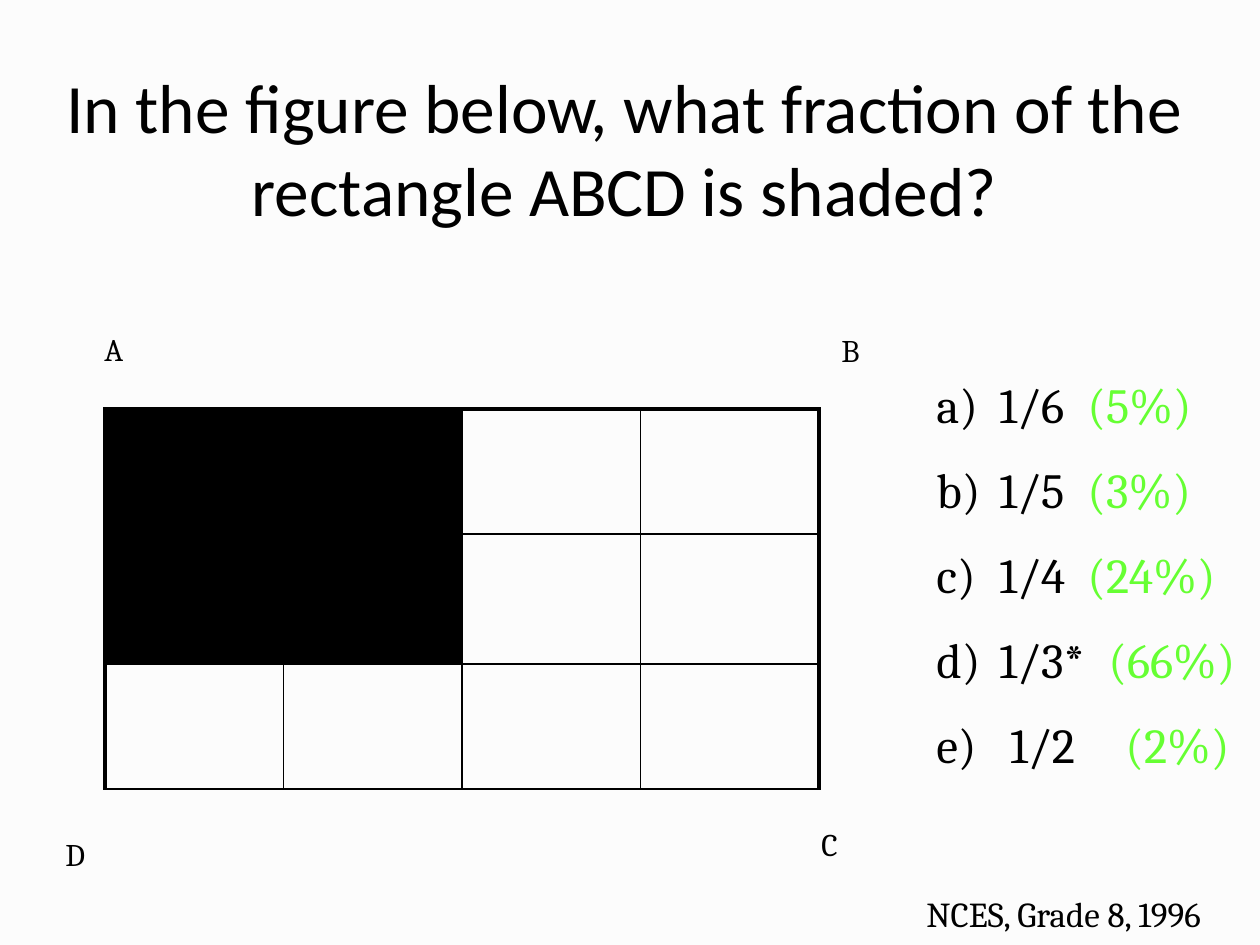
from dataclasses import dataclass

from lxml import etree
from pptx import Presentation
from pptx.dml.color import RGBColor
from pptx.enum.text import MSO_ANCHOR, PP_ALIGN
from pptx.oxml.ns import qn
from pptx.util import Emu, Pt

CENTER, LEFT = PP_ALIGN.CENTER, PP_ALIGN.LEFT
MIDDLE, TOP = MSO_ANCHOR.MIDDLE, MSO_ANCHOR.TOP
PX_PER_INCH = 126
COLORS = {"paper": "FCFCFC", "ink": "000000", "percent": "66FF33"}
ROW_HEIGHTS = (125, 130, 125)
COLUMNS = 4
SHADED_ROWS, SHADED_COLUMNS = 2, 2
THIN, THICK = 1, 2.25
HANGING = 63


@dataclass(frozen=True)
class Label:
    """A single-paragraph text box, placed in px."""

    text: str
    left: int
    top: int
    width: int
    height: int
    size: float = 18
    font: str = "Cambria"
    align: int = LEFT
    anchor: int = TOP


@dataclass(frozen=True)
class Answer:
    """One choice with the share of pupils who picked it."""

    choice: str
    share: str
    tab: int
    number: int | None = None


LABELS = (
    Label("In the figure below, what fraction of the rectangle ABCD is shaded?",
          42, 53, 1165, 189, 39.6, "Calibri", CENTER, MIDDLE),
    Label("A", 92, 324, 55, 63),
    Label("B", 829, 325, 53, 63),
    Label("D", 53, 829, 63, 63),
    Label("C", 809, 819, 53, 63),
    Label("NCES, Grade 8, 1996", 914, 886, 346, 55, 20),
)
ANSWERS = (
    Answer("1/6", "(5%)", 151, 1),
    Answer("1/5", "(3%)", 151, 2),
    Answer("1/4", "(24%)", 151, 3),
    Answer("1/3*", "(66%)", 172, 4),
    Answer("e)\t 1/2", "(2%)", 161),
)


def px(length: float) -> Emu:
    """Turn px into EMU."""
    return Emu(round(length * 914400 / PX_PER_INCH))


def color(name: str) -> RGBColor:
    """Look up a named colour."""
    return RGBColor.from_string(COLORS[name])


def style(font, size: float, name: str, tint: str = "ink") -> None:
    """Set size, typeface and colour of a font."""
    font.size, font.name = Pt(size), name
    font.color.rgb = color(tint)


def add_box(page, left: int, top: int, width: int, height: int):
    """Add a wrapping text box and return its text frame."""
    box = page.shapes.add_textbox(px(left), px(top), px(width), px(height))
    box.text_frame.word_wrap = True
    return box.text_frame


def add_label(page, label: Label) -> None:
    """Draw a label."""
    frame = add_box(page, label.left, label.top, label.width, label.height)
    frame.text = label.text
    frame.vertical_anchor = label.anchor
    para = frame.paragraphs[0]
    para.alignment = label.align
    style(para.runs[0].font, label.size, label.font)


def add_borders(cell, widths: dict[str, float]) -> None:
    """Give a cell solid borders, keyed by side letter in L, R, T, B order."""
    properties = cell._tc.get_or_add_tcPr()
    for index, (side, width) in enumerate(widths.items()):
        line = etree.Element(qn(f"a:ln{side}"), w=str(Pt(width)))
        fill = etree.SubElement(line, qn("a:solidFill"))
        etree.SubElement(fill, qn("a:srgbClr"), val=COLORS["ink"])
        properties.insert(index, line)


def add_rectangle_abcd(page) -> None:
    """Draw the divided rectangle as a table with its shaded corner."""
    rows = len(ROW_HEIGHTS)
    table = page.shapes.add_table(rows, COLUMNS, px(105), px(409), px(714),
                                  px(sum(ROW_HEIGHTS))).table
    table.first_row = table.horz_banding = False
    for row, height in enumerate(ROW_HEIGHTS):
        table.rows[row].height = px(height)
        for column in range(COLUMNS):
            cell = table.cell(row, column)
            if row < SHADED_ROWS and column < SHADED_COLUMNS:
                cell.fill.solid()
                cell.fill.fore_color.rgb = color("ink")
            else:
                cell.fill.background()
            add_borders(cell, {
                "L": THICK if column == 0 else THIN,
                "R": THICK if column == COLUMNS - 1 else THIN,
                "T": THICK if row == 0 else THIN,
                "B": THIN,
            })


def add_answers(page, answers: tuple[Answer, ...]) -> None:
    """Draw the lettered choices with their shares."""
    frame = add_box(page, 924, 368, 336, 428)
    for index, answer in enumerate(answers):
        para = frame.add_paragraph() if index else frame.paragraphs[0]
        para.text = f"{answer.choice}\t"
        para.add_run().text = answer.share
        properties = para._p.get_or_add_pPr()
        properties.set("marL", str(px(HANGING)))
        properties.set("indent", str(-px(HANGING)))
        if answer.number:
            etree.SubElement(properties, qn("a:buFont"), typeface="+mj-lt")
            etree.SubElement(properties, qn("a:buAutoNum"),
                             type="alphaLcParenR", startAt=str(answer.number))
        tabs = etree.SubElement(properties, qn("a:tabLst"))
        for stop in (HANGING, answer.tab):
            etree.SubElement(tabs, qn("a:tab"), pos=str(px(stop)), algn="l")
        if index:
            para.space_before = Pt(15)
        for span, tint in zip(para.runs, ("ink", "percent")):
            style(span.font, 28, "Cambria", tint)


def main() -> None:
    """Build the slide and save it."""
    deck = Presentation()
    deck.slide_width, deck.slide_height = px(1260), px(945)
    page = deck.slides.add_slide(deck.slide_layouts[6])
    page.background.fill.solid()
    page.background.fill.fore_color.rgb = color("paper")
    add_rectangle_abcd(page)
    for label in LABELS:
        add_label(page, label)
    add_answers(page, ANSWERS)
    deck.save("out.pptx")


if __name__ == "__main__":
    main()
